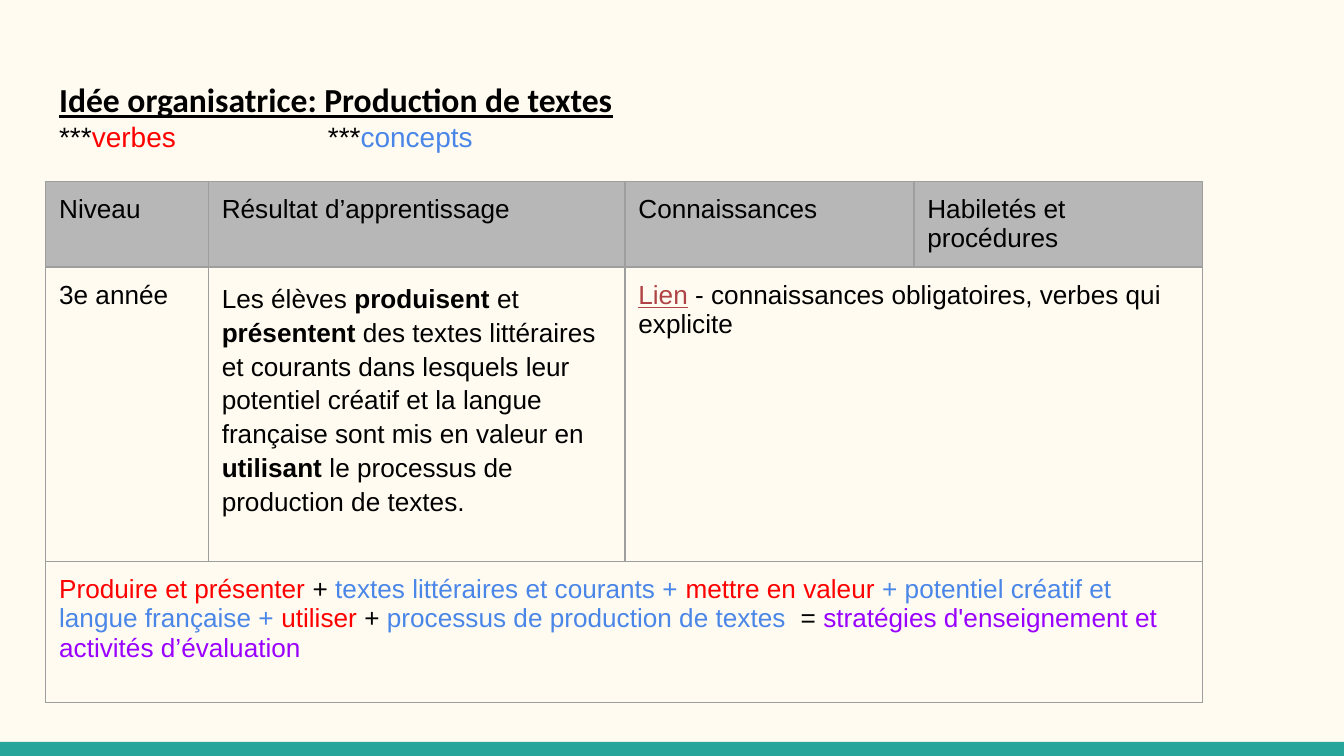
from lxml.etree import SubElement as Sub
from pptx import Presentation
from pptx.dml.color import RGBColor as RGB
from pptx.enum.shapes import MSO_SHAPE as Shape
from pptx.enum.text import MSO_ANCHOR as Anchor, MSO_AUTO_SIZE as Auto, PP_ALIGN as Align
from pptx.oxml.ns import qn
from pptx.util import Inches, Pt

COLORS = {
    "page": "FFFBF0", "bar": "26A69A", "head": "B7B7B7", "edge": "9E9E9E",
    "text": "000000", "verb": "FF0000", "idea": "4A86E8", "link": "AF4345",
    "plan": "9900FF",
}
TITLE = [
    ("Calibri", 18, [("Idée organisatrice: Production de textes", "text", "bu")]),
    ("Arial", 15, [("***", "text", ""), ("verbes", "verb", ""),
                   ("\t\t***", "text", ""), ("concepts", "idea", "")]),
]
TABS = [1, 2]
HEADS = ["Niveau", "Résultat d’apprentissage", "Connaissances", "Habiletés et procédures"]
GOAL = [
    ("Les élèves ", "text", ""), ("produisent", "text", "b"),
    (" et ", "text", ""), ("présentent", "text", "b"),
    (" des textes littéraires et courants dans lesquels leur potentiel créatif "
     "et la langue française sont mis en valeur en ", "text", ""),
    ("utilisant", "text", "b"),
    (" le processus de production de textes. ", "text", ""),
]
LINK = [
    ("Lien", "link", "u"),
    (" - connaissances obligatoires, verbes qui explicite", "text", ""),
]
SUM = [
    ("Produire et présenter", "verb", ""), (" + ", "text", ""),
    ("textes littéraires et courants + ", "idea", ""),
    ("mettre en valeur ", "verb", ""),
    ("+ potentiel créatif et langue française + ", "idea", ""),
    ("utiliser ", "verb", ""), ("+", "text", ""),
    (" processus de production de textes", "idea", ""), ("  = ", "text", ""),
    ("stratégies d'enseignement et activités d’évaluation", "plan", ""),
]
ROWS = [
    [(1, [(head, "text", "")], 1) for head in HEADS],
    [(1, [("3e année", "text", "")], 1), (1, GOAL, 1.15), (2, LINK, 1)],
    [(4, SUM, 1)],
]
WIDTHS = [1.21, 3.1, 2.15, 2.15]
HEIGHTS = [0.54, 2.19, 1.05]


def paint(fill, name):
    fill.solid()
    fill.fore_color.rgb = RGB.from_string(COLORS[name])


def write(par, runs, face, size, gap=1):
    par.alignment, par.line_spacing = Align.LEFT, gap
    par.font.name, par.font.size = face, Pt(size)
    for text, color, style in runs:
        run = par.add_run()
        run.text = text
        font = run.font
        font.name, font.size = face, Pt(size)
        font.bold, font.underline = "b" in style, "u" in style
        font.color.rgb = RGB.from_string(COLORS[color])


def pad(box):
    box.margin_left = box.margin_right = Inches(0.1)
    box.margin_top = box.margin_bottom = Inches(0.1)
    box.vertical_anchor = Anchor.TOP


def edge(cell):
    props = cell._tc.get_or_add_tcPr()
    for side in ("lnL", "lnR", "lnT", "lnB"):
        line = Sub(props, qn("a:" + side), w=str(Pt(0.75)))
        Sub(Sub(line, qn("a:solidFill")), qn("a:srgbClr"), val=COLORS["edge"])


def stop(par):
    props = par._p.get_or_add_pPr()
    stops = props.makeelement(qn("a:tabLst"), {})
    for tab in TABS:
        Sub(stops, qn("a:tab"), pos=str(Inches(tab)), algn="l")
    props.find(qn("a:defRPr")).addprevious(stops)


def main():
    deck = Presentation()
    deck.slide_width = Inches(10)
    deck.slide_height = Inches(10 * 9 / 16)
    slide = deck.slides.add_slide(deck.slide_layouts[5])
    paint(slide.background.fill, "page")

    bar = slide.shapes.add_shape(
        Shape.RECTANGLE, 0, Inches(5.52), deck.slide_width, Inches(0.11))
    bar.shadow.inherit = False
    paint(bar.fill, "bar")
    bar.line.fill.background()

    title = slide.shapes.title
    title.left, title.top = Inches(0.34), Inches(0.49)
    title.width, title.height = Inches(9.32), Inches(0.67)
    frame = title.text_frame
    pad(frame)
    frame.word_wrap, frame.auto_size = True, Auto.NONE
    for i, (face, size, runs) in enumerate(TITLE):
        par = frame.add_paragraph() if i else frame.paragraphs[0]
        write(par, runs, face, size)
    stop(par)

    grid = slide.shapes.add_table(
        len(HEIGHTS), len(WIDTHS), Inches(0.34), Inches(1.35),
        Inches(sum(WIDTHS)), Inches(sum(HEIGHTS))).table
    grid.first_row = grid.horz_banding = False
    for col, width in zip(grid.columns, WIDTHS):
        col.width = Inches(width)
    for row, height in zip(grid.rows, HEIGHTS):
        row.height = Inches(height)
    for cell in grid.iter_cells():
        pad(cell)
        edge(cell)
        cell.fill.background()
    for r, row in enumerate(ROWS):
        c = 0
        for span, runs, gap in row:
            cell = grid.cell(r, c)
            if span > 1:
                cell.merge(grid.cell(r, c + span - 1))
            if r == 0:
                paint(cell.fill, "head")
            write(cell.text_frame.paragraphs[0], runs, "Arial", 14, gap)
            c += span

    deck.save("out.pptx")


if __name__ == "__main__":
    main()
